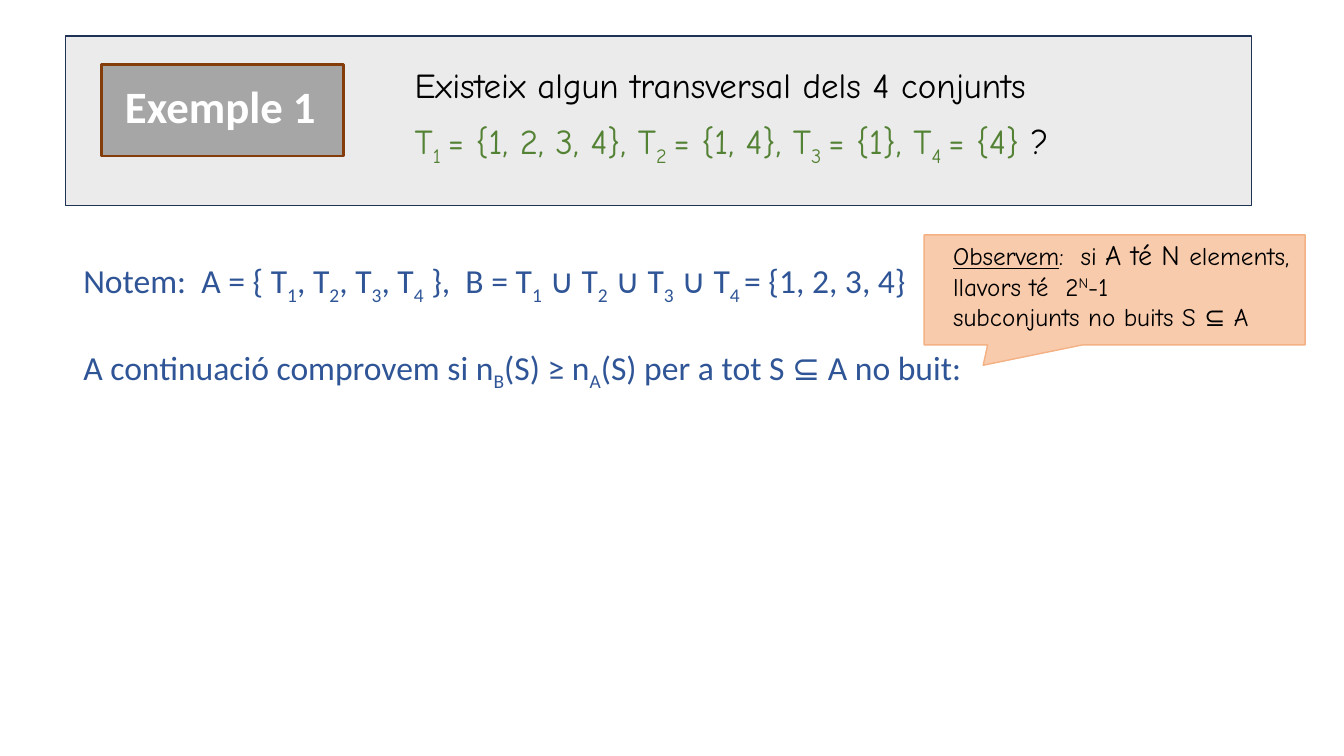
from lxml.etree import SubElement
from pptx import Presentation
from pptx.dml.color import RGBColor
from pptx.enum.shapes import MSO_SHAPE
from pptx.enum.text import MSO_ANCHOR, MSO_AUTO_SIZE, PP_ALIGN
from pptx.oxml.ns import qn
from pptx.util import Cm, Pt

COLOURS = {
    "panel": "D9D9D9", "panel_line": "1E3256",
    "label": "A6A6A6", "label_line": "843C0B", "label_text": "FFFFFF",
    "sets": "548235", "text": "000000", "note": "2F5597",
    "callout": "F8CBAD", "callout_line": "F4B183",
}
SUBSCRIPT, SUPERSCRIPT = "-25000", "30000"


def colour(name):
    return RGBColor.from_string(COLOURS[name])


def set_values(target, values):
    for name, value in values.items():
        setattr(target, name, value)


def place(shape, box):
    names = ("left", "top", "width", "height")
    set_values(shape, {name: Cm(value) for name, value in zip(names, box)})


def paint(shape, name, line_width):
    shape.fill.solid()
    shape.fill.fore_color.rgb = colour(name)
    shape.line.color.rgb = colour(name + "_line")
    shape.line.width = Pt(line_width)


def set_frame(frame, left=0.25, top=0.13, right=0.25, anchor=MSO_ANCHOR.TOP):
    set_values(frame, {
        "word_wrap": True, "auto_size": MSO_AUTO_SIZE.NONE,
        "margin_left": Cm(left), "margin_top": Cm(top),
        "margin_right": Cm(right), "margin_bottom": Cm(0.13),
        "vertical_anchor": anchor,
    })


def add_text(paragraph, text, colour_name, shift=SUBSCRIPT, **font_values):
    """Add runs; the parts between underscores are raised or lowered."""
    for index, part in enumerate(text.split("_")):
        if part:
            run = paragraph.add_run()
            run.text = part
            set_values(run.font, font_values)
            run.font.color.rgb = colour(colour_name)
            if index % 2:
                run.font._element.set("baseline", shift)


def add_shape(slide, kind, box, name, line_width):
    shape = slide.shapes.add_shape(kind, *[Cm(value) for value in box])
    shape.shadow.inherit = False
    paint(shape, name, line_width)
    return shape


def add_problem(slide, box):
    left, top, width, height = box

    # Half-transparent panel behind the placeholders
    panel = add_shape(slide, MSO_SHAPE.RECTANGLE, box, "panel", 1)
    fill_colour = panel._element.spPr.find(qn("a:solidFill"))[0]
    SubElement(fill_colour, qn("a:alpha"), val="50000")
    slide.shapes._spTree.insert(2, panel._element)

    # Label
    title = slide.shapes.title
    place(title, (left + 0.9, top + 0.71, 6.1, 2.31))
    paint(title, "label", 2)
    set_frame(title.text_frame, left=0.6, top=0.05, right=0,
              anchor=MSO_ANCHOR.MIDDLE)
    paragraph = title.text_frame.paragraphs[0]
    set_values(paragraph, {"alignment": PP_ALIGN.LEFT, "line_spacing": 0.9})
    add_text(paragraph, "Exemple 1", "label_text",
             name="Calibri", size=Pt(32), bold=True)

    # Question
    body = slide.placeholders[1]
    place(body, (left + 8.55, top + 0.69, width - 8.8, height - 1.12))
    set_frame(body.text_frame)
    font = {"name": "Comic Neue", "size": Pt(25)}
    question = body.text_frame.paragraphs[0]
    sets = body.text_frame.add_paragraph()
    for paragraph in (question, sets):
        set_values(paragraph, {"line_spacing": 0.9, "space_before": Pt(10)})
        properties = paragraph._p.get_or_add_pPr()
        properties.set("marL", "0")
        properties.set("indent", "0")
        SubElement(properties, qn("a:buNone"))
    add_text(question, "Existeix algun transversal dels 4 conjunts", "text", **font)
    add_text(sets, "T_1 _= {1, 2, 3, 4}, T_2 _= {1, 4}, T_3 _= {1}, T_4 _= {4} ",
             "sets", **font)
    add_text(sets, "?", "text", **font)


def add_note(slide, box, text):
    text_box = slide.shapes.add_textbox(*[Cm(value) for value in box])
    set_frame(text_box.text_frame, left=0.45, top=0, right=0)
    add_text(text_box.text_frame.paragraphs[0], text, "note",
             name="Calibri", size=Pt(24))


def add_observation(slide, box):
    callout = add_shape(slide, MSO_SHAPE.RECTANGULAR_CALLOUT, box, "callout", 1)
    for index, value in enumerate((-0.345, 0.686)):
        callout.adjustments[index] = value
    frame = callout.text_frame
    set_frame(frame, left=0.73, top=0.07, right=0)
    font = {"name": "Comic Neue", "size": Pt(18)}
    count = frame.paragraphs[0]
    add_text(count, "Observem", "text", underline=True, **font)
    add_text(count, ":  si ", "text", **font)
    add_text(count, "A té N ", "text", name="Comic Neue", size=Pt(20))
    add_text(count, "elements, llavors té  2_N_-1", "text", SUPERSCRIPT, **font)
    subsets = frame.add_paragraph()
    add_text(subsets, "subconjunts no buits S ⊆ A", "text", **font)
    for paragraph in (count, subsets):
        paragraph.alignment = PP_ALIGN.LEFT


def main():
    presentation = Presentation()
    set_values(presentation, {"slide_width": Cm(33.87), "slide_height": Cm(19.05)})
    slide = presentation.slides.add_slide(presentation.slide_layouts[1])
    add_problem(slide, (1.65, 0.91, 29.89, 4.27))
    add_note(slide, (1.65, 6.56, 21.6, 1.4),
             "Notem:  A = { T_1_, T_2_, T_3_, T_4_ },  "
             "B = T_1_ ∪ T_2_ ∪ T_3_ ∪ T_4 _= {1, 2, 3, 4}")
    add_note(slide, (1.65, 8.73, 23.1, 1.4),
             "A continuació comprovem si n_B_(S) ≥ n_A_(S) "
             "per a tot S ⊆ A no buit:")
    add_observation(slide, (23.29, 5.92, 9.6, 2.77))
    presentation.save("out.pptx")


if __name__ == "__main__":
    main()
